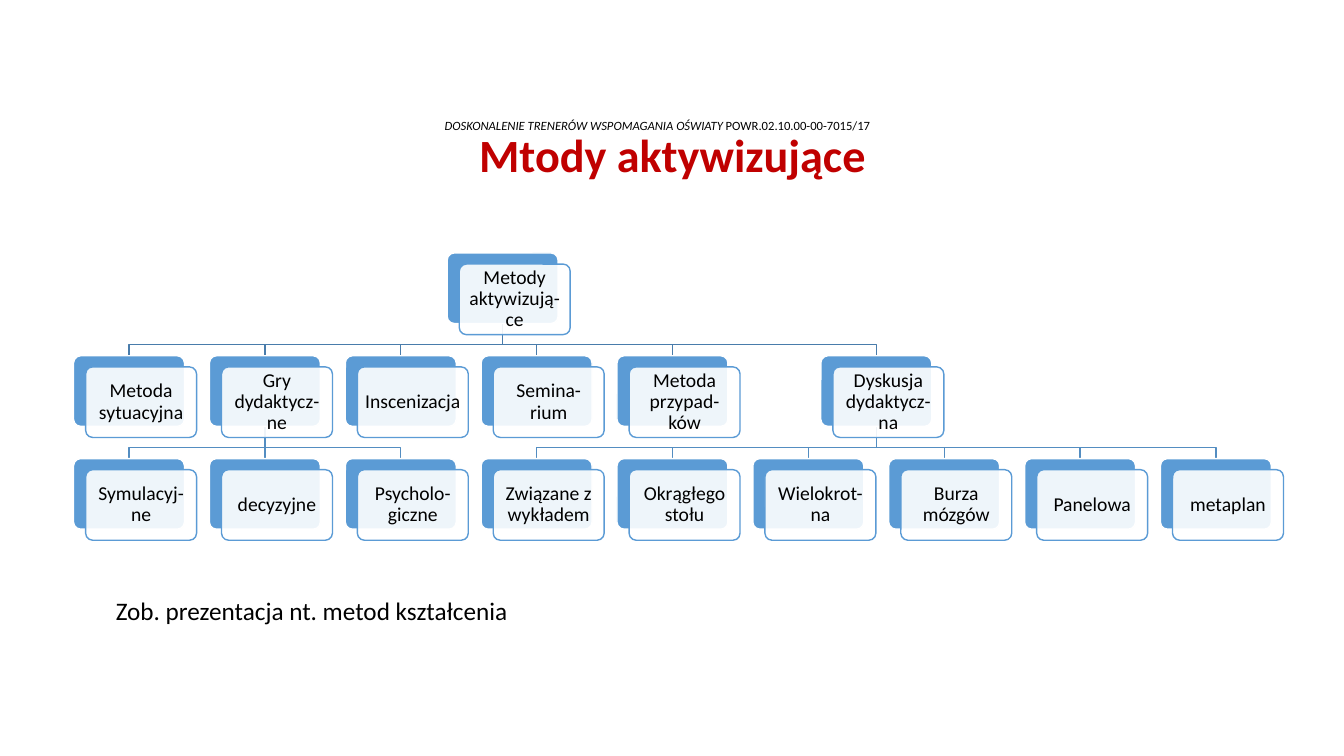
from pptx import Presentation
from pptx.dml.color import RGBColor
from pptx.enum.shapes import MSO_CONNECTOR, MSO_SHAPE
from pptx.enum.text import MSO_ANCHOR, PP_ALIGN
from pptx.oxml.ns import qn
from pptx.util import Inches, Pt
from lxml.etree import SubElement

BLACK = RGBColor(0, 0, 0)
WHITE = RGBColor(255, 255, 255)
RED = RGBColor(0xC0, 0, 0)
BLUE = RGBColor(0x5B, 0x9B, 0xD5)
ROOT_LINK = RGBColor(0x49, 0x7C, 0xAB)
BRANCH_LINK = RGBColor(0x53, 0x8D, 0xC1)

FONT = "Calibri"
CARD_W, CARD_H = 1.1, 0.7
SHIFT_X, SHIFT_Y = 0.12, 0.11
ROW_STEP = 1.02
LAST_SLOT = 8

METHODS = [
    ("Metody aktywizują-ce", 0, 2.75),
    ("Metoda sytuacyjna", 1, 0),
    ("Gry dydaktycz-ne", 1, 1),
    ("Inscenizacja", 1, 2),
    ("Semina-rium", 1, 3),
    ("Metoda przypad-ków", 1, 4),
    ("Dyskusja dydaktycz-na", 1, 5.5),
    ("Symulacyj-ne", 2, 0),
    ("decyzyjne", 2, 1),
    ("Psycholo-giczne", 2, 2),
    ("Związane z wykładem", 2, 3),
    ("Okrągłego stołu", 2, 4),
    ("Wielokrot-na", 2, 5),
    ("Burza mózgów", 2, 6),
    ("Panelowa", 2, 7),
    ("metaplan", 2, 8),
]
LINKS = [
    (0, range(1, 7), ROOT_LINK),
    (2, range(7, 10), BRANCH_LINK),
    (6, range(10, 16), BRANCH_LINK),
]


def style(paragraph, size, color=BLACK, align=PP_ALIGN.CENTER, bold=False):
    paragraph.alignment = align
    font = paragraph.font
    font.name, font.size, font.bold = FONT, Pt(size), bold
    font.color.rgb = color


def add_text(slide, left, top, width, height, wrap=True):
    frame = slide.shapes.add_textbox(*map(Inches, (left, top, width, height))).text_frame
    frame.word_wrap = wrap
    frame.vertical_anchor = MSO_ANCHOR.MIDDLE
    return frame.paragraphs[0]


def add_heading(slide, left, top, width):
    project = add_text(slide, left, top, width, 0.2)
    for words, italic in (("DOSKONALENIE TRENERÓW WSPOMAGANIA OŚWIATY ", True),
                          ("POWR.02.10.00-00-7015/17", False)):
        run = project.add_run()
        run.text = words
        run.font.italic = italic
    style(project, 9)

    title = add_text(slide, left + 0.13, top + 0.1, width + 0.04, 0.64)
    title.text = "Mtody aktywizujące"
    title.line_spacing = 0.9
    style(title, 33, RED, bold=True)


def add_panel(slide, left, top, fill, line):
    panel = slide.shapes.add_shape(MSO_SHAPE.ROUNDED_RECTANGLE,
                                   *map(Inches, (left, top, CARD_W, CARD_H)))
    panel.adjustments[0] = 0.1
    panel.shadow.inherit = False
    panel.fill.solid()
    panel.fill.fore_color.rgb = fill
    panel.line.color.rgb = line
    panel.line.width = Pt(1)
    return panel


def add_card(slide, left, top, label):
    back = add_panel(slide, left, top, BLUE, WHITE)
    front = add_panel(slide, left + SHIFT_X, top + SHIFT_Y, WHITE, BLUE)
    white = front.fill._xPr.find(qn("a:solidFill"))[0]
    SubElement(white, qn("a:alpha")).set("val", "90000")
    frame = front.text_frame
    frame.word_wrap = True
    frame.vertical_anchor = MSO_ANCHOR.MIDDLE
    frame.margin_left = frame.margin_right = Inches(0.05)
    frame.margin_top = frame.margin_bottom = Inches(0.06)
    name = frame.paragraphs[0]
    name.text = label
    name.line_spacing = 0.9
    style(name, 14)
    return back


def add_link(slide, start, end, color):
    (x1, y1), (x2, y2) = start, end
    if x1 == x2:
        link = slide.shapes.add_connector(MSO_CONNECTOR.STRAIGHT,
                                          *map(Inches, (x1, y1, x2, y2)))
        SubElement(link._element.spPr, qn("a:effectLst"))
    else:
        bend = y2 - SHIFT_Y
        route = slide.shapes.build_freeform(Inches(x1), Inches(y1))
        route.add_line_segments([(Inches(x), Inches(y)) for x, y in
                                 ((x1, bend), (x2, bend), (x2, y2))], close=False)
        link = route.convert_to_shape()
        link.shadow.inherit = False
        link.fill.background()
    link.line.color.rgb = color
    link.line.width = Pt(1)
    return link


def add_tree(slide, left, top, width):
    pitch = (width - CARD_W - SHIFT_X) / LAST_SLOT
    corners = [(left + slot * pitch, top + row * ROW_STEP) for _, row, slot in METHODS]
    straight_links = []
    for parent, children, color in LINKS:
        parent_x, parent_y = corners[parent]
        for child in children:
            child_x, child_y = corners[child]
            link = add_link(slide, (parent_x + CARD_W / 2, parent_y + CARD_H),
                            (child_x + CARD_W / 2, child_y), color)
            if parent_x == child_x:
                straight_links.append((link, parent, child))
    cards = [add_card(slide, x, y, label)
             for (x, y), (label, _, _) in zip(corners, METHODS)]
    for link, parent, child in straight_links:
        link.begin_connect(cards[parent], 2)
        link.end_connect(cards[child], 0)


def add_reference(slide, left, top):
    reference = add_text(slide, left, top, 4.13, 0.4, wrap=False)
    reference.text = "Zob. prezentacja nt. metod kształcenia"
    style(reference, 18, align=PP_ALIGN.LEFT)


def main():
    deck = Presentation()
    deck.slide_width, deck.slide_height = Inches(13.33), Inches(7.5)
    slide = deck.slides.add_slide(deck.slide_layouts[6])
    add_heading(slide, 0.79, 1.14, 11.46)
    add_reference(slide, 1.05, 5.86)
    add_tree(slide, 0.73, 2.51, 12)
    deck.save("out.pptx")


if __name__ == "__main__":
    main()
